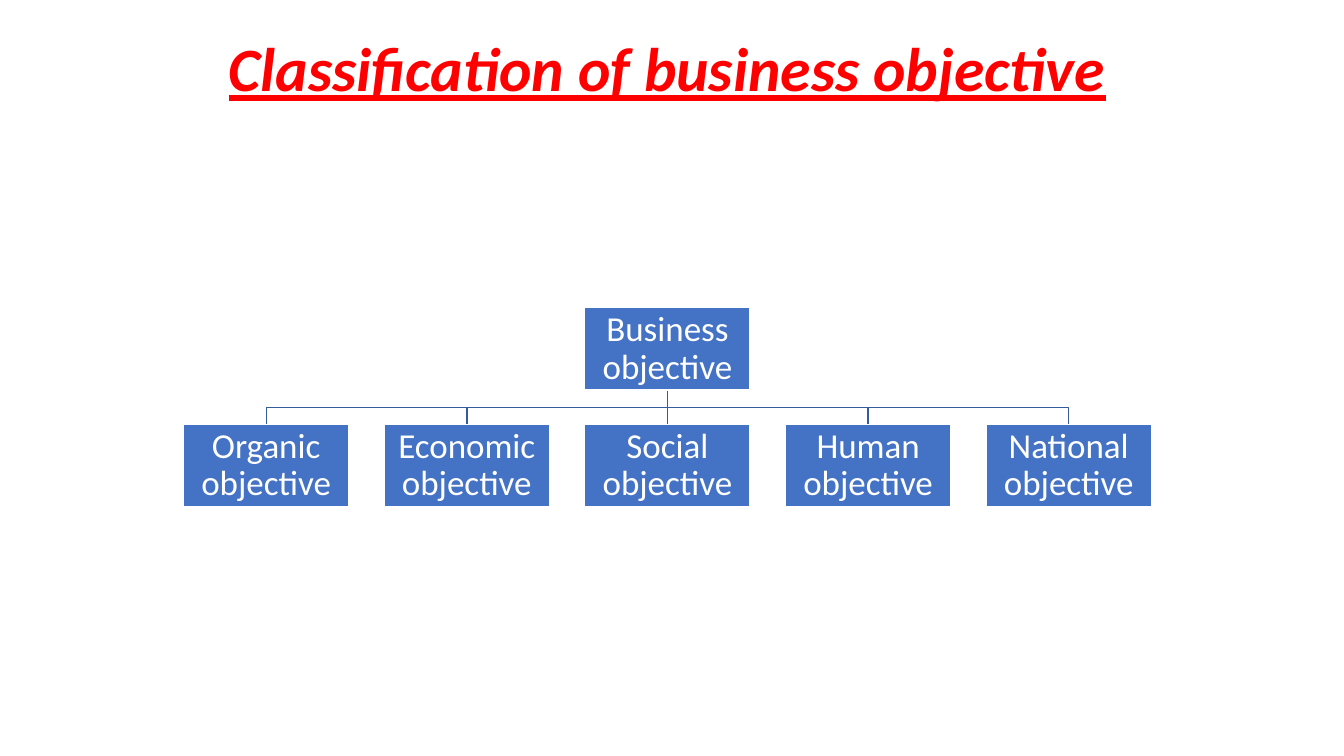
from lxml import etree
from pptx import Presentation
from pptx.dml.color import RGBColor
from pptx.enum import shapes, text
from pptx.oxml.ns import qn
from pptx.util import Inches, Pt

COLORS = {"title": "FF0000", "box": "4472C4", "branch": "365B9D", "white": "FFFFFF"}
FONT = "Calibri"

BOX_WIDTH, BOX_HEIGHT = 1.64, 0.82
ROOT_LEFT, ROOT_TOP = 5.8, 3.05
CHILD_TOP, CHILD_STEP = 4.21, 1.99
CHILDREN = ["Organic", "Economic", "Social", "Human", "National"]


class ChartPage:
    def __init__(self, page):
        self.page = page

    def color(self, name):
        return RGBColor.from_string(COLORS[name])

    def add_words(self, shape, words, size, color, align, inset, emphasis=False):
        frame = shape.text_frame
        frame.word_wrap = True
        frame.vertical_anchor = text.MSO_ANCHOR.MIDDLE
        frame.margin_left = frame.margin_right = Inches(inset[0])
        frame.margin_top = frame.margin_bottom = Inches(inset[1])
        para = frame.paragraphs[0]
        para.alignment = align
        para.line_spacing = 0.9
        span = para.add_run()
        span.text = words
        font = span.font
        font.name, font.size = FONT, Pt(size)
        font.color.rgb = self.color(color)
        font.bold = font.italic = font.underline = emphasis

    def title(self, words, left, top, width, height):
        box = self.page.shapes.add_textbox(*map(Inches, (left, top, width, height)))
        self.add_words(box, words, 44, "title", text.PP_ALIGN.LEFT, (0.1, 0.05), True)

    def box(self, words, left, top):
        box = self.page.shapes.add_shape(
            shapes.MSO_SHAPE.RECTANGLE,
            *map(Inches, (left, top, BOX_WIDTH, BOX_HEIGHT)))
        box.shadow.inherit = False
        box.fill.solid()
        box.fill.fore_color.rgb = self.color("box")
        self.outline(box, "white")
        self.add_words(box, words, 25, "white", text.PP_ALIGN.CENTER, (0.02, 0.02))

    def outline(self, shape, color):
        shape.line.color.rgb = self.color(color)
        shape.line.width = Pt(1)

    def stem(self, x, top, bottom):
        line = self.page.shapes.add_connector(
            shapes.MSO_CONNECTOR.STRAIGHT, *map(Inches, (x, top, x, bottom)))
        self.outline(line, "branch")
        etree.SubElement(line._element.spPr, qn("a:effectLst"))

    def branch(self, start_x, end_x, top, bottom):
        middle = (top + bottom) / 2
        builder = self.page.shapes.build_freeform(Inches(start_x), Inches(top))
        corners = [(start_x, middle), (end_x, middle), (end_x, bottom)]
        builder.add_line_segments(
            [(Inches(x), Inches(y)) for x, y in corners], close=False)
        line = builder.convert_to_shape()
        line.shadow.inherit = False
        line.fill.background()
        self.outline(line, "branch")


def main():
    deck = Presentation()
    deck.slide_width, deck.slide_height = Inches(13.33), Inches(7.5)
    chart = ChartPage(deck.slides.add_slide(deck.slide_layouts[6]))

    # Title
    chart.title("Classification of business objective", 2.17, 0.17, 9, 1.08)

    # Branches from the root to each child, spread evenly around it
    root_x, root_bottom = ROOT_LEFT + BOX_WIDTH / 2, ROOT_TOP + BOX_HEIGHT
    middle = len(CHILDREN) // 2
    lefts = [ROOT_LEFT + (i - middle) * CHILD_STEP for i in range(len(CHILDREN))]
    for i, left in enumerate(lefts):
        if i == middle:
            chart.stem(root_x, root_bottom, CHILD_TOP)
        else:
            chart.branch(root_x, left + BOX_WIDTH / 2, root_bottom, CHILD_TOP)

    # Boxes
    chart.box("Business objective", ROOT_LEFT, ROOT_TOP)
    for name, left in zip(CHILDREN, lefts):
        chart.box(f"{name} objective", left, CHILD_TOP)

    deck.save("out.pptx")


if __name__ == "__main__":
    main()
